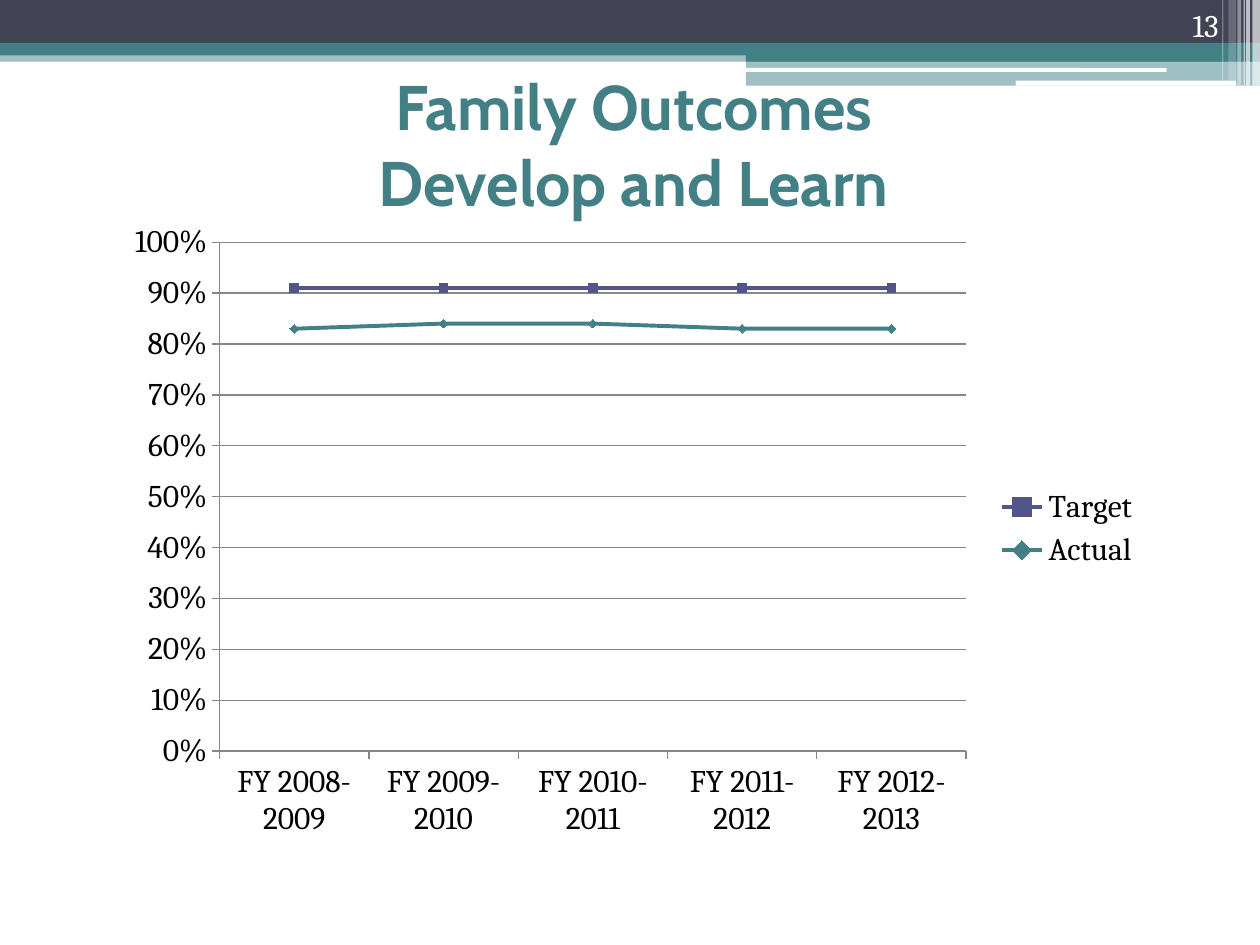
from lxml.etree import SubElement
from pptx import Presentation
from pptx.chart.data import CategoryChartData
from pptx.dml.color import RGBColor
from pptx.enum.chart import XL_CHART_TYPE as Chart, XL_LEGEND_POSITION as Legend
from pptx.enum.chart import XL_MARKER_STYLE as Marker, XL_TICK_MARK as Tick
from pptx.enum.shapes import MSO_SHAPE as Shape
from pptx.enum.text import MSO_ANCHOR as Anchor, PP_ALIGN as Align
from pptx.oxml import parse_xml
from pptx.oxml.ns import nsdecls, qn
from pptx.util import Inches, Pt

TEAL, SLATE, INDIGO, WHITE, GRAY = "438086", "424456", "53548A", "FFFFFF", "878787"
RECT, ROUND = Shape.RECTANGLE, Shape.ROUNDED_RECTANGLE

# left, top, width, height, colour, opacity in percent, outline
BANDS = [
    (0, 0.4, 10, 0.09, TEAL, 50, RECT),
    (0, 0, 10, 0.34, SLATE, 100, RECT),
    (0, 0.34, 10, 0.1, TEAL, 100, RECT),
    (5.92, 0.39, 4.08, 0.1, TEAL, 100, RECT),
    (5.92, 0.48, 4.08, 0.2, TEAL, 50, RECT),
    (5.91, 0.54, 3.35, 0.03, WHITE, 100, ROUND),
    (8.06, 0.64, 1.75, 0.04, WHITE, 100, ROUND),
]
# left, width, height, opacity in percent
STRIPES = [
    (9.94, 0.06, 0.68, 65),
    (9.89, 0.03, 0.68, 65),
    (9.87, 0.01, 0.68, 60),
    (9.82, 0.03, 0.68, 40),
    (9.75, 0.06, 0.64, 20),
    (9.7, 0.01, 0.64, 30),
]
YEARS = [f"FY {year}- {year + 1}" for year in range(2008, 2013)]
# name, values, colour, marker
SERIES = [
    ("Target", [0.91] * 5, INDIGO, Marker.SQUARE),
    ("Actual", [0.83, 0.84, 0.84, 0.83, 0.83], TEAL, Marker.DIAMOND),
]


def rgb(color):
    return RGBColor.from_string(color)


def set_font(font, name, size, color, bold=False):
    font.name, font.size, font.bold = name, Pt(size), bold
    font.color.rgb = rgb(color)


def paint(fill, color):
    fill.solid()
    fill.fore_color.rgb = rgb(color)


def add_bar(slide, left, top, width, height, color, opacity=100, outline=RECT):
    sp = slide.shapes.add_shape(
        outline, Inches(left), Inches(top), Inches(width), Inches(height))
    sp.shadow.inherit = False
    sp.line.fill.background()
    paint(sp.fill, color)
    if opacity < 100:
        clr = sp.fill._xPr.find(".//" + qn("a:srgbClr"))
        SubElement(clr, qn("a:alpha"), val=str(opacity * 1000))


def set_title(slide, text):
    title = slide.shapes.title
    title.left, title.top = Inches(0.92), Inches(0.75)
    title.width, title.height = Inches(8.22), Inches(0.77)
    tf = title.text_frame
    tf.text = text
    tf.vertical_anchor = Anchor.MIDDLE
    p = tf.paragraphs[0]
    p.alignment = Align.CENTER
    set_font(p.font, "Cabin", 36, TEAL, bold=True)


def add_page_number(slide, number):
    box = slide.shapes.add_textbox(Inches(8.94), 0, Inches(0.83), Inches(0.4))
    tf = box.text_frame
    tf.word_wrap = True
    tf.vertical_anchor = Anchor.BOTTOM
    p = tf.paragraphs[0]
    p.text = str(number)
    p.alignment = Align.RIGHT
    set_font(p.font, "Cambria", 18, WHITE)


def set_plot_layout(chart, **fractions):
    """Fix the inner plot area, in fractions of the chart frame."""
    area = chart._chartSpace.chart.plotArea
    for old in area.findall(qn("c:layout")):
        area.remove(old)
    sizes = "".join(f'<c:{k} val="{v}"/>' for k, v in fractions.items())
    area.insert(0, parse_xml(
        f'<c:layout {nsdecls("c")}><c:manualLayout><c:layoutTarget val="inner"/>'
        f'<c:xMode val="edge"/><c:yMode val="edge"/>{sizes}'
        '</c:manualLayout></c:layout>'))


def style_axis(axis):
    axis.major_tick_mark, axis.minor_tick_mark = Tick.OUTSIDE, Tick.NONE
    axis.format.line.color.rgb = rgb(GRAY)
    axis.format.line.width = Pt(0.75)


def add_outcomes_chart(slide):
    data = CategoryChartData(number_format="0%")
    data.categories = YEARS
    for name, values, *_ in SERIES:
        data.add_series(name, values)
    chart = slide.shapes.add_chart(
        Chart.LINE_MARKERS, Inches(0.92), Inches(1.67), Inches(8.23), Inches(5.05),
        data).chart
    set_font(chart.font, "Cambria", 18, "000000")
    chart.has_title = False
    chart.has_legend = True
    chart.legend.position = Legend.RIGHT
    chart.legend.include_in_layout = False
    set_plot_layout(chart, x=0.1, y=0.05, w=0.72, h=0.8)

    style_axis(chart.category_axis)
    values = chart.value_axis
    style_axis(values)
    values.minimum_scale, values.maximum_scale, values.major_unit = 0, 1, 0.1
    values.tick_labels.number_format = "0%"
    values.tick_labels.number_format_is_linked = False
    values.has_major_gridlines = True
    values.major_gridlines.format.line.color.rgb = rgb(GRAY)
    values.major_gridlines.format.line.width = Pt(0.75)

    plot = chart.plots[0]
    plot.vary_by_categories = False
    for s, (_, _, color, marker) in zip(plot.series, SERIES):
        s.smooth = False
        s.format.line.color.rgb = rgb(color)
        s.format.line.width = Pt(2.25)
        s.marker.style, s.marker.size = marker, 5
        paint(s.marker.format.fill, color)
        s.marker.format.line.color.rgb = rgb(color)


def main():
    prs = Presentation()
    prs.slide_width, prs.slide_height = Inches(10), Inches(7.5)
    slide = prs.slides.add_slide(prs.slide_layouts[5])
    for band in BANDS:
        add_bar(slide, *band)
    for left, width, height, opacity in STRIPES:
        add_bar(slide, left, 0, width, height, WHITE, opacity)
    set_title(slide, "Family Outcomes\vDevelop and Learn")
    add_outcomes_chart(slide)
    add_page_number(slide, 13)
    prs.save("out.pptx")


if __name__ == "__main__":
    main()
